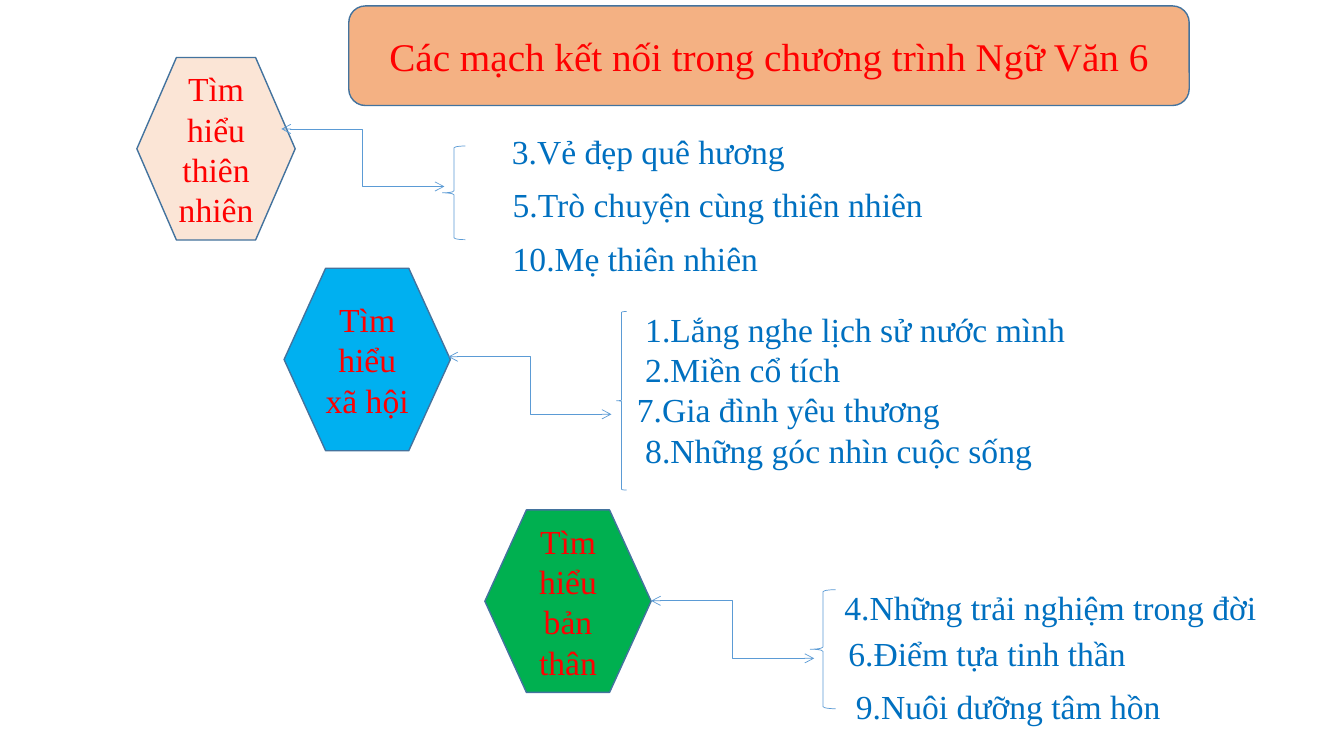
from lxml.etree import SubElement
from pptx import Presentation
from pptx.dml.color import RGBColor
from pptx.enum.shapes import MSO_CONNECTOR, MSO_SHAPE
from pptx.enum.text import MSO_ANCHOR, MSO_AUTO_SIZE, PP_ALIGN
from pptx.oxml.ns import qn
from pptx.util import Cm, Pt

FONT = "Times New Roman"
RED = "FF0000"
TOPIC_BLUE = "0070C0"
OUTLINE = "43739E"
CONNECTOR_BLUE = "5B9BD5"
HEXAGON_HEIGHT = 4.6
ARROW_WIDTH, ARROW_HEIGHT = 4.11, 1.45

TITLE = "Các mạch kết nối trong chương trình Ngữ Văn 6"

# Each topic box: left, top, width, height, wrap, lines
STRANDS = [
    {
        "name": "Tìm hiểu thiên nhiên",
        "fill": "FBE5D6",
        "hexagon": (3.45, 1.45, 3.99),
        "arrow": (7.09, 3.25),
        "brace": (11.15, 3.68, 0.58, 2.36),
        "topics": [
            (12.65, 3.18, 7.47, 1.27, False, ["3.Vẻ đẹp quê hương"]),
            (12.67, 4.5, 10.95, 1.27, False, ["5.Trò chuyện cùng thiên nhiên"]),
            (12.67, 5.87, 7.85, 1.27, True, ["10.Mẹ thiên nhiên"]),
        ],
    },
    {
        "name": "Tìm hiểu xã hội",
        "fill": "00B0F0",
        "hexagon": (7.16, 6.76, 4.19),
        "arrow": (11.3, 8.99),
        "brace": (15.54, 7.85, 0.25, 4.5),
        "topics": [
            (15.8, 7.65, 16.23, 4.37, True, [
                " 1.Lắng nghe lịch sử nước mình",
                " 2.Miền cổ tích",
                "7.Gia đình yêu thương",
                " 8.Những góc nhìn cuộc sống",
            ]),
        ],
    },
    {
        "name": "Tìm hiểu bản thân",
        "fill": "00B050",
        "hexagon": (12.22, 12.85, 4.19),
        "arrow": (16.41, 15.14),
        "brace": (20.42, 14.86, 0.64, 3),
        "topics": [
            (21.03, 14.66, 11, 1.27, False, ["4.Những trải nghiệm trong đời"]),
            (21.13, 15.82, 7.95, 1.27, True, ["6.Điểm tựa tinh thần"]),
            (21.11, 17.15, 9.14, 1.27, True, [" 9.Nuôi dưỡng tâm hồn"]),
        ],
    },
]


def color(value):
    """Turn a hex string into a colour."""
    return RGBColor.from_string(value)


def style_line(line, value, width):
    """Set the colour and width of a line."""
    line.color.rgb = color(value)
    line.width = Pt(width)


def add_run(paragraph, text, size, value):
    """Add one formatted run to a paragraph."""
    run = paragraph.add_run()
    run.text = text
    run.font.name = FONT
    run.font.size = Pt(size)
    run.font.color.rgb = color(value)


def add_label(slide, kind, box, fill, text, size):
    """Add a filled shape with centred red text."""
    shape = slide.shapes.add_shape(kind, *map(Cm, box))
    shape.shadow.inherit = False
    shape.fill.solid()
    shape.fill.fore_color.rgb = color(fill)
    style_line(shape.line, OUTLINE, 1)
    shape.text_frame.word_wrap = True
    shape.text_frame.vertical_anchor = MSO_ANCHOR.MIDDLE
    paragraph = shape.text_frame.paragraphs[0]
    paragraph.alignment = PP_ALIGN.CENTER
    add_run(paragraph, text, size, RED)


def add_brace(slide, box):
    """Add a thin left brace."""
    shape = slide.shapes.add_shape(MSO_SHAPE.LEFT_BRACE, *map(Cm, box))
    shape.shadow.inherit = False
    shape.fill.background()
    style_line(shape.line, CONNECTOR_BLUE, 0.5)


def add_arrow(slide, left, top):
    """Add a bent connector with an open arrowhead at each end."""
    ends = (left, top, left + ARROW_WIDTH, top + ARROW_HEIGHT)
    connector = slide.shapes.add_connector(MSO_CONNECTOR.ELBOW, *map(Cm, ends))
    style_line(connector.line, CONNECTOR_BLUE, 0.5)
    properties = connector._element.spPr
    outline = properties.find(qn("a:ln"))
    for tag in ("a:headEnd", "a:tailEnd"):
        SubElement(outline, qn(tag), type="arrow")
    SubElement(properties, qn("a:effectLst"))


def add_topics(slide, left, top, width, height, wrap, lines):
    """Add a text box with one paragraph per topic."""
    shape = slide.shapes.add_textbox(Cm(left), Cm(top), Cm(width), Cm(height))
    frame = shape.text_frame
    frame.word_wrap = wrap
    frame.auto_size = MSO_AUTO_SIZE.SHAPE_TO_FIT_TEXT
    for index, text in enumerate(lines):
        paragraph = frame.add_paragraph() if index else frame.paragraphs[0]
        add_run(paragraph, text, 24, TOPIC_BLUE)


def add_strand(slide, strand):
    """Add a hexagon, its arrow and brace, and its topics."""
    box = (*strand["hexagon"], HEXAGON_HEIGHT)
    add_label(slide, MSO_SHAPE.HEXAGON, box, strand["fill"], strand["name"], 24)
    add_arrow(slide, *strand["arrow"])
    add_brace(slide, strand["brace"])
    for topic in strand["topics"]:
        add_topics(slide, *topic)


def main():
    """Build and save the slide."""
    presentation = Presentation()
    presentation.slide_width = Cm(33.87)
    presentation.slide_height = Cm(19.05)
    slide = presentation.slides.add_slide(presentation.slide_layouts[6])
    for strand in STRANDS:
        add_strand(slide, strand)
    add_label(slide, MSO_SHAPE.FLOWCHART_ALTERNATE_PROCESS,
              (8.79, 0.15, 21.18, 2.51), "F4B183", TITLE, 28)
    presentation.save("out.pptx")


if __name__ == "__main__":
    main()
